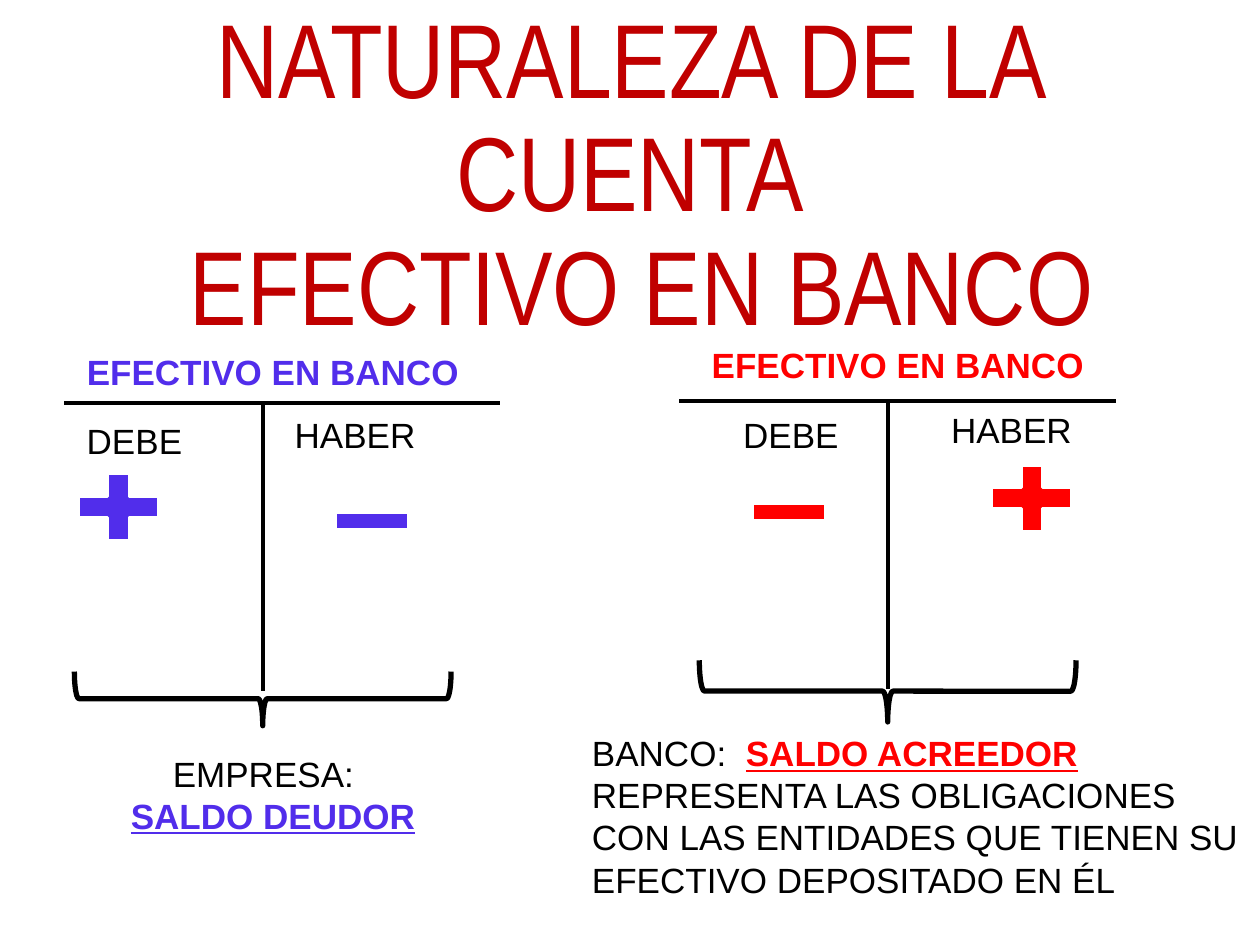
"""Build a slide comparing the bank cash account of the company and of the bank."""
import pptx
import pptx.util
from lxml import etree
from pptx.dml.color import RGBColor
from pptx.enum.shapes import MSO_CONNECTOR, MSO_SHAPE
from pptx.enum.text import MSO_ANCHOR, MSO_AUTO_SIZE, PP_ALIGN

Pt = pptx.util.Pt
BLACK, WHITE, DARK_RED, BLUE, RED = "000000", "FFFFFF", "C00000", "512DEB", "FF0000"
TITLE = "NATURALEZA DE LA CUENTA\v EFECTIVO EN BANCO"
ACCOUNTS = [
    {"color": BLUE, "bar": (36.7, 285.8, 230.4), "stem": (150.5, 394.6),
     "heading": (42.5, 196.6), "debit": (42.5, 236.2), "credit": (161.3, 232.6),
     "plus": (36.7, 264.2), "minus": (184.3, 277.9), "brace": (134.6, 291.6, 31)},
    {"color": RED, "bar": (388.1, 637.9, 229), "stem": (507.6, 393.8),
     "heading": (399.6, 193), "debit": (417.6, 232.6), "credit": (536.4, 229.7),
     "plus": (558.7, 259.2), "minus": (422.6, 272.9), "brace": (489.6, 287.3, 35.3)},
]
BALANCES = [
    {"frame": (-14.4, 426.2, 329.8, 55.4), "align": PP_ALIGN.CENTER, "indent": 11,
     "lines": [[("EMPRESA:", None)], [("SALDO DEUDOR", BLUE)]]},
    {"frame": (331.2, 414.7, 410.4, 104.4), "align": PP_ALIGN.LEFT, "indent": 0,
     "lines": [[("BANCO:  ", None), ("SALDO ACREEDOR", RED)],
               [("REPRESENTA LAS OBLIGACIONES", None)],
               [("CON LAS ENTIDADES QUE TIENEN SU EFECTIVO DEPOSITADO EN ÉL", None)]]},
]


def rgb(value):
    return RGBColor.from_string(value)


def style(span, color, size=20, bold=False, name="Arial"):
    span.font.name, span.font.size, span.font.bold = name, Pt(size), bold
    span.font.color.rgb = rgb(color)


def add_box(page, frame, wrap=True):
    box = page.shapes.add_textbox(*map(Pt, frame))
    box.text_frame.word_wrap = wrap
    box.text_frame.auto_size = MSO_AUTO_SIZE.SHAPE_TO_FIT_TEXT
    return box


def add_label(page, text, corner, width, color=BLACK, bold=False):
    box = add_box(page, (*corner, width, 31.5), wrap=False)
    box.text_frame.text = text
    style(box.text_frame.paragraphs[0].runs[0], color, bold=bold)


def add_line(page, *ends):
    line = page.shapes.add_connector(MSO_CONNECTOR.STRAIGHT, *map(Pt, ends))
    line.line.color.rgb = rgb(BLACK)
    line.line.width = Pt(2.25)
    properties = line._element.spPr
    etree.SubElement(properties, pptx.oxml.ns.qn("a:effectLst"))


def add_figure(page, kind, frame, fill, outline, width):
    shape = page.shapes.add_shape(kind, *map(Pt, frame))
    shape.shadow.inherit = False
    if fill:
        shape.fill.solid()
        shape.fill.fore_color.rgb = rgb(fill)
    else:
        shape.fill.background()
    shape.line.color.rgb = rgb(outline)
    shape.line.width = Pt(width)
    return shape


def add_title(page):
    box = page.shapes.add_textbox(Pt(54), Pt(38.2), Pt(612), Pt(126.7))
    box.text_frame.word_wrap = True
    box.text_frame.vertical_anchor = MSO_ANCHOR.MIDDLE
    box.text_frame.text = TITLE
    para = box.text_frame.paragraphs[0]
    para.alignment, para.line_spacing = PP_ALIGN.CENTER, 0.9
    for span in para.runs:
        style(span, DARK_RED, 60, name="Arial Narrow")


def add_account(page, account):
    left, right, top = account["bar"]
    center, bottom = account["stem"]
    color = account["color"]
    add_line(page, left, top, right, top)
    add_line(page, center, top, center, bottom)
    add_label(page, "EFECTIVO EN BANCO", account["heading"], 229, color, True)
    add_label(page, "DEBE", account["debit"], 69.8)
    add_label(page, "HABER", account["credit"], 84.2)
    add_figure(page, MSO_SHAPE.MATH_PLUS, (*account["plus"], 61.9, 51.1), color, WHITE, 1.5)
    add_figure(page, MSO_SHAPE.MATH_MINUS, (*account["minus"], 56.2, 39.6), color, WHITE, 1.5)
    brace_left, brace_top, depth = account["brace"]
    brace = add_figure(page, MSO_SHAPE.RIGHT_BRACE,
                       (brace_left, brace_top, depth, 215.3), None, BLACK, 3)
    brace.rotation = 90


def add_balance(page, balance):
    frame = add_box(page, balance["frame"]).text_frame
    for index, line in enumerate(balance["lines"]):
        para = frame.add_paragraph() if index else frame.paragraphs[0]
        para.alignment = balance["align"]
        if index and balance["indent"]:
            para._p.get_or_add_pPr().set("marL", str(Pt(balance["indent"])))
        for text, accent in line:
            span = para.add_run()
            span.text = text
            style(span, accent or BLACK, bold=bool(accent))
            span.font.underline = bool(accent)


def main():
    deck = pptx.Presentation()
    deck.slide_width, deck.slide_height = Pt(720), Pt(540)
    page = deck.slides.add_slide(deck.slide_layouts[6])
    page.background.fill.solid()
    page.background.fill.fore_color.rgb = rgb(WHITE)
    add_title(page)
    for account in ACCOUNTS:
        add_account(page, account)
    for balance in BALANCES:
        add_balance(page, balance)
    deck.save("out.pptx")


if __name__ == "__main__":
    main()
